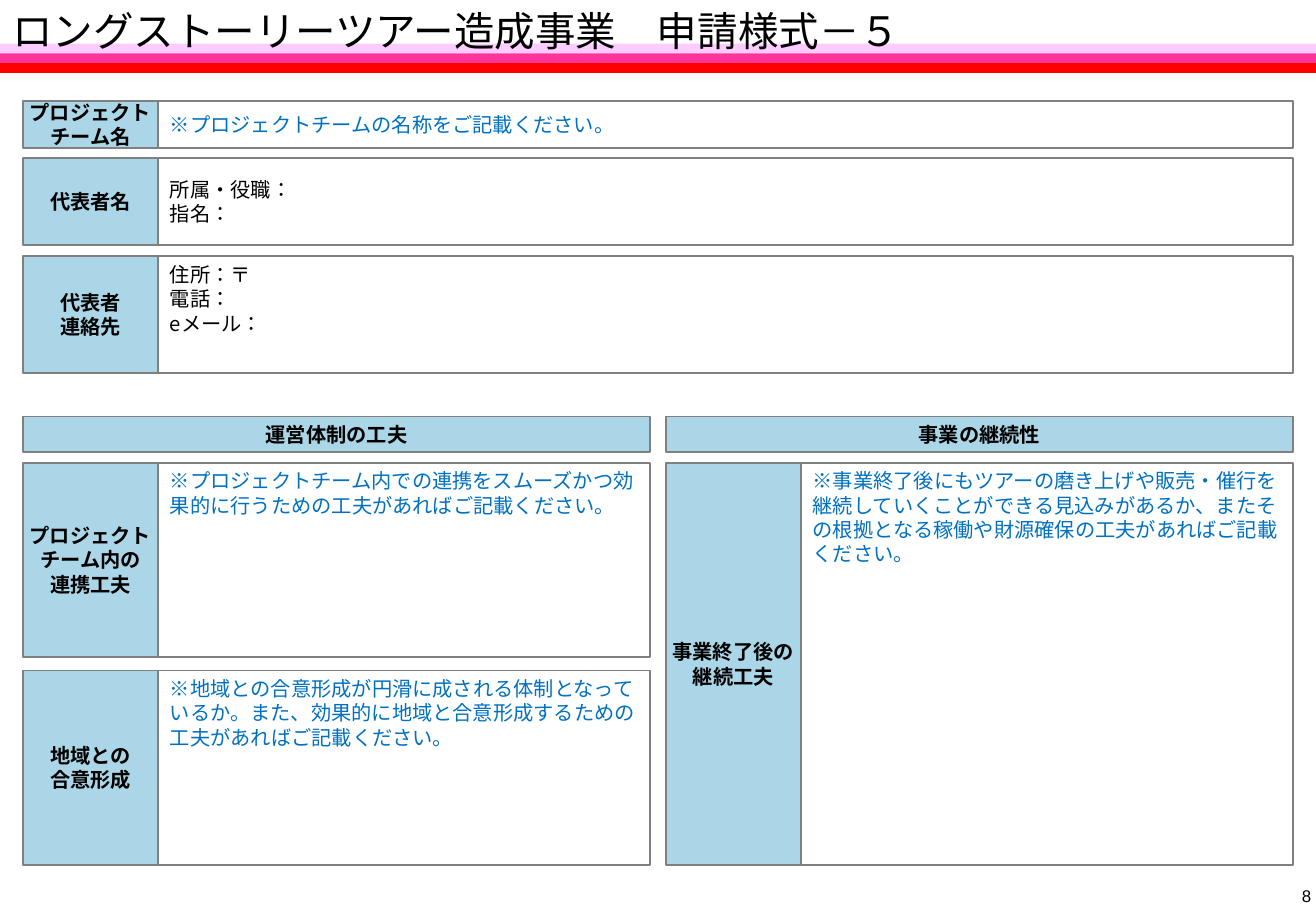
from pptx import Presentation
from pptx.dml.color import RGBColor
from pptx.enum.shapes import MSO_SHAPE
from pptx.enum.text import MSO_ANCHOR, MSO_AUTO_SIZE, PP_ALIGN
from pptx.oxml.ns import qn
from pptx.util import Inches, Pt

RECT = MSO_SHAPE.RECTANGLE
TOP, MIDDLE, BOTTOM = MSO_ANCHOR.TOP, MSO_ANCHOR.MIDDLE, MSO_ANCHOR.BOTTOM
LEFT, CENTER, RIGHT = PP_ALIGN.LEFT, PP_ALIGN.CENTER, PP_ALIGN.RIGHT
NO_FIT = MSO_AUTO_SIZE.NONE

FONT = "Noto Sans CJK JP"
BLACK, WHITE, GRAY = "000000", "FFFFFF", "808080"
HINT_BLUE, LABEL_BLUE = "0070C0", "AAD6E7"
BANDS = ["FFCCFF", "FF3399", "FF0000"]

SLIDE_W, SLIDE_H = 10.83, 7.5
MARGIN, LABEL_W = 0.19, 1.11
FULL_W, COLUMN_W = 10.45, 5.16
COLUMNS = [MARGIN, MARGIN + FULL_W - COLUMN_W]
HEADING_Y, HEADING_H = 3.43, 0.29
DETAIL_Y, DETAIL_H, DETAIL_STEP = 3.81, 1.6, 1.71

TEAM_FIELDS = [
    (0.83, 0.39, "プロジェクト\nチーム名",
     "※プロジェクトチームの名称をご記載ください。", HINT_BLUE, MIDDLE),
    (1.3, 0.72, "代表者名", "所属・役職：\n指名：", BLACK, MIDDLE),
    (2.11, 0.96, "代表者\n連絡先", "住所：〒\n電話：\neメール：", BLACK, TOP),
]
OPERATION_FIELDS = [
    ("プロジェクト\nチーム内の\n連携工夫",
     "※プロジェクトチーム内での連携をスムーズかつ効果的に行うための工夫があればご記載ください。"),
    ("地域との\n合意形成",
     "※地域との合意形成が円滑に成される体制となっているか。また、効果的に地域と合意形成するための"
     "工夫があればご記載ください。"),
]
CONTINUITY_FIELD = (
    "事業終了後の\n継続工夫",
    "※事業終了後にもツアーの磨き上げや販売・催行を継続していくことができる見込みがあるか、"
    "またその根拠となる稼働や財源確保の工夫があればご記載ください。",
)


def rgb(color):
    return RGBColor.from_string(color)


def box(x, y, w, h):
    return [Inches(v) for v in (x, y, w, h)]


def write(sp, text, size=12, color=BLACK, bold=False, font=FONT,
          align=LEFT, anchor=MIDDLE, wrap=True):
    """Fill a shape with one paragraph per line of text."""
    tf = sp.text_frame
    tf.auto_size = NO_FIT
    tf.word_wrap = wrap
    tf.vertical_anchor = anchor
    for i, line in enumerate(text.split("\n")):
        p = tf.add_paragraph() if i else tf.paragraphs[0]
        p.alignment = align
        p.line_spacing = Pt(size * 1.2)
        r = p.add_run()
        r.text = line
        r._r.get_or_add_rPr().set("lang", "ja-JP")
        r.font.size = Pt(size)
        r.font.bold = bold
        r.font.name = font
        r.font.color.rgb = rgb(color)
        ea = r.font._element.makeelement(qn("a:ea"), {"typeface": font})
        r.font._element.find(qn("a:latin")).addnext(ea)


def add_block(s, x, y, w, h, fill, line=None):
    sp = s.shapes.add_shape(RECT, *box(x, y, w, h))
    sp.shadow.inherit = False
    sp.fill.solid()
    sp.fill.fore_color.rgb = rgb(fill)
    if line:
        sp.line.color.rgb = rgb(line)
        sp.line.width = Pt(1)
    else:
        sp.line.fill.background()
    return sp


def add_label(s, x, y, w, h, text):
    sp = add_block(s, x, y, w, h, LABEL_BLUE, GRAY)
    write(sp, text, bold=True, align=CENTER, wrap=False)


def add_field(s, x, y, w, h, label, text, color=HINT_BLUE, anchor=TOP):
    """Draw a label cell with its entry cell on the right."""
    entry = add_block(s, x + LABEL_W, y, w - LABEL_W, h, WHITE, GRAY)
    write(entry, text, color=color, anchor=anchor)
    add_label(s, x, y, LABEL_W, h, label)


def add_header(s):
    for i, color in enumerate(BANDS):
        add_block(s, 0, 0.36 + 0.08 * i, SLIDE_W, 0.08, color)
    title = s.shapes.title
    title.left, title.top, title.width, title.height = box(0, 0.07, 9.99, 0.36)
    write(title, "ロングストーリーツアー造成事業　申請様式－５", size=24)
    s.shapes._spTree.append(title._element)  # bring in front of the bands


def add_page_number(s, number):
    sp = s.shapes.add_textbox(*box(10.59, 7.27, 0.24, 0.23))
    tf = sp.text_frame
    tf.margin_left = tf.margin_right = tf.margin_top = tf.margin_bottom = Inches(0.04)
    write(sp, number, size=10, font="Arial", align=RIGHT, anchor=BOTTOM)


def main():
    prs = Presentation()
    prs.slide_width, prs.slide_height = Inches(SLIDE_W), Inches(SLIDE_H)
    s = prs.slides.add_slide(prs.slide_layouts[5])

    add_header(s)
    for y, h, *content in TEAM_FIELDS:
        add_field(s, MARGIN, y, FULL_W, h, *content)

    for x, heading in zip(COLUMNS, ["運営体制の工夫", "事業の継続性"]):
        add_label(s, x, HEADING_Y, COLUMN_W, HEADING_H, heading)
    for i, content in enumerate(OPERATION_FIELDS):
        add_field(s, COLUMNS[0], DETAIL_Y + i * DETAIL_STEP, COLUMN_W, DETAIL_H, *content)
    add_field(s, COLUMNS[1], DETAIL_Y, COLUMN_W, DETAIL_STEP + DETAIL_H, *CONTINUITY_FIELD)

    add_page_number(s, "8")
    prs.save("out.pptx")


if __name__ == "__main__":
    main()
